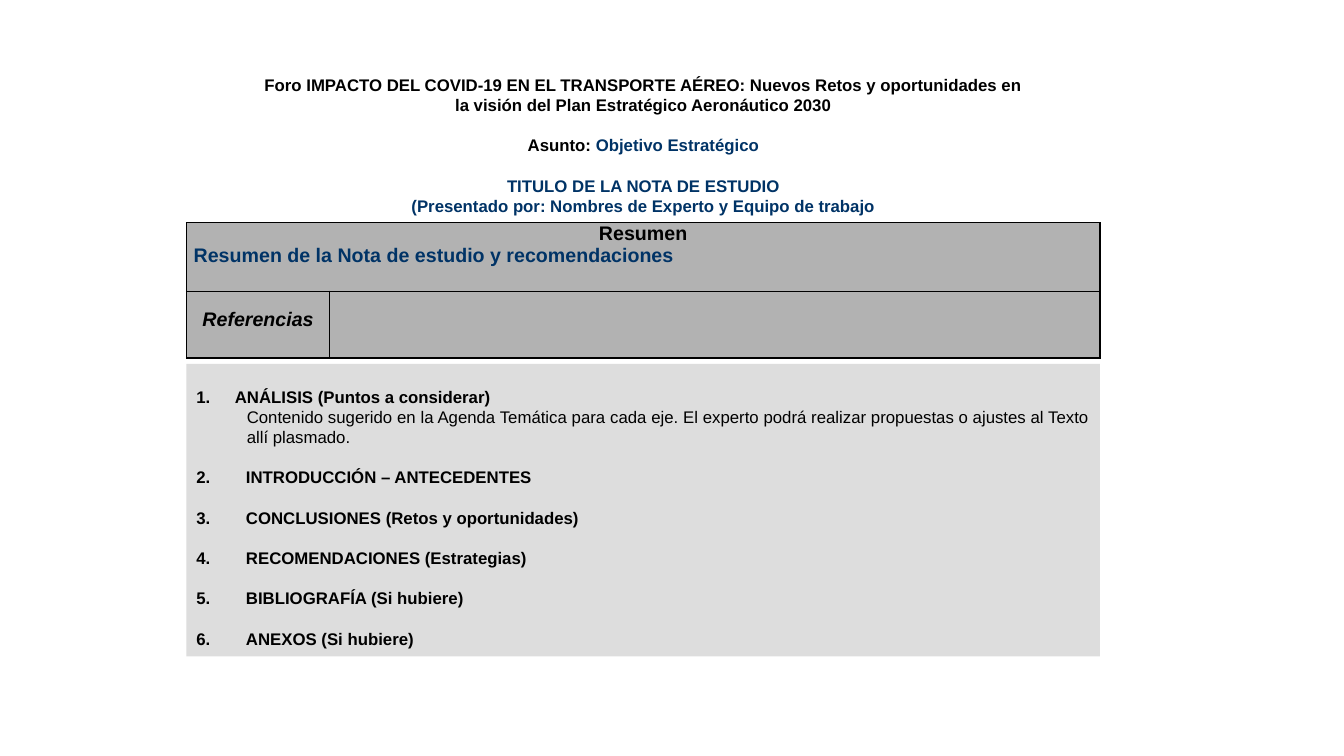
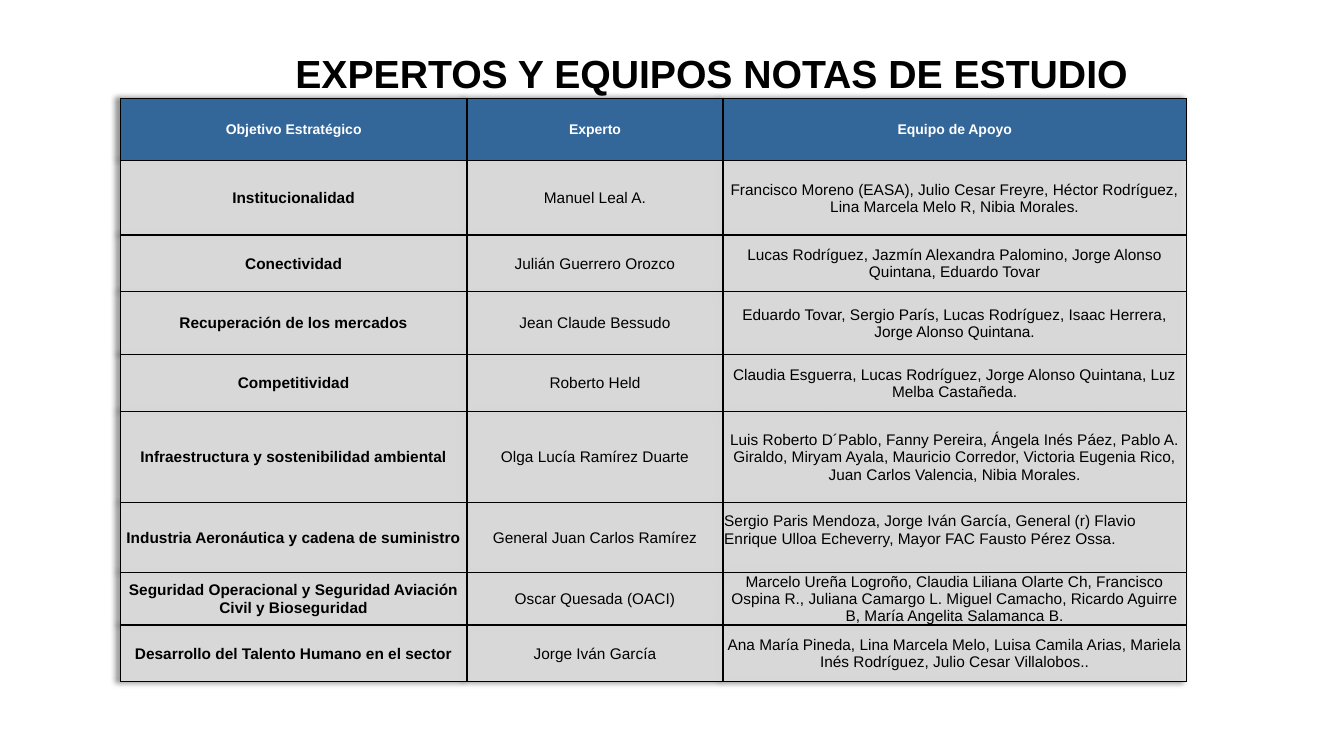
from lxml import etree
from pptx import Presentation
from pptx.dml.color import RGBColor
from pptx.enum.shapes import MSO_SHAPE
from pptx.enum.text import MSO_ANCHOR, MSO_AUTO_SIZE, PP_ALIGN
from pptx.oxml import parse_xml
from pptx.oxml.ns import nsdecls, qn
from pptx.util import Cm, Pt

BLACK, WHITE, NAVY, BLUE = "000000", "FFFFFF", "003366", "336699"
SUMMARY_GRAY, LIGHT_GRAY = "B2B2B2", "DDDDDD"
LINE_GAP = Pt(14.4)
TITLE_ONLY = 5
color = RGBColor.from_string


def write(paragraph, text, size, hue=BLACK, align=PP_ALIGN.CENTER, bold=True, italic=False):
    """Add a run in the deck's typeface and align its paragraph."""
    paragraph.alignment = align
    run = paragraph.add_run()
    run.text = text
    style = {"name": "Arial", "size": Pt(size), "bold": bold, "italic": italic}
    for attribute, value in style.items():
        setattr(run.font, attribute, value)
    run.font.color.rgb = color(hue)


def format_cell(cell, fill, margins):
    """Fill a cell, set its left, top, right and bottom margins, and border it."""
    cell.fill.solid()
    cell.fill.fore_color.rgb = color(fill)
    for side, margin in zip(("left", "top", "right", "bottom"), margins):
        setattr(cell, f"margin_{side}", Cm(margin))
    properties = cell._tc.get_or_add_tcPr()
    for index, edge in enumerate(("lnL", "lnR", "lnT", "lnB")):
        properties.insert(index, parse_xml(
            f'<a:{edge} {nsdecls("a")} w="12700"><a:solidFill>'
            f'<a:srgbClr val="{BLACK}"/></a:solidFill></a:{edge}>'))


prs = Presentation()
prs.slide_width, prs.slide_height = Cm(33.87), Cm(19.05)

# Slide 1: study note template
note = prs.slides.add_slide(prs.slide_layouts[TITLE_ONLY])
heading = note.shapes.title
heading.left, heading.top, heading.width, heading.height = Cm(6.27), Cm(1.75), Cm(19.89), Cm(3.84)
heading_text = heading.text_frame
heading_text.auto_size = MSO_AUTO_SIZE.NONE
heading_text.vertical_anchor = MSO_ANCHOR.TOP
heading_lines = [
    ([("Foro IMPACTO DEL COVID-19 EN EL TRANSPORTE AÉREO: Nuevos Retos y oportunidades en "
       "la visión del Plan Estratégico Aeronáutico 2030", BLACK)], 0),
    ([("Asunto: ", BLACK), ("Objetivo Estratégico", NAVY)], LINE_GAP),
    ([("TITULO DE LA NOTA DE ESTUDIO", NAVY)], LINE_GAP),
    ([("(Presentado por: Nombres de Experto y Equipo de trabajo", NAVY)], 0),
]
for index, (pieces, gap) in enumerate(heading_lines):
    line = heading_text.add_paragraph() if index else heading_text.paragraphs[0]
    line.space_before = gap
    for text, hue in pieces:
        write(line, text, 12, hue)

summary = note.shapes.add_table(2, 2, Cm(4.7), Cm(5.61), Cm(23.02), Cm(3.41)).table
summary.first_row = summary.horz_banding = False
for column, width in zip(summary.columns, (3.61, 19.41)):
    column.width = Cm(width)
for row, height in zip(summary.rows, (1.73, 1.68)):
    row.height = Cm(height)
for cell in summary.iter_cells():
    format_cell(cell, SUMMARY_GRAY, (0.18, 0, 0.18, 0))
summary.cell(0, 0).merge(summary.cell(0, 1))
abstract = summary.cell(0, 0).text_frame
write(abstract.paragraphs[0], "Resumen", 14)
write(abstract.add_paragraph(), "Resumen de la Nota de estudio y recomendaciones", 14, NAVY,
      PP_ALIGN.JUSTIFY)
references = summary.cell(1, 0)
references.margin_top = Cm(0.44)
write(references.text_frame.paragraphs[0], "Referencias", 14, italic=True)

outline = note.shapes.add_shape(MSO_SHAPE.RECTANGLE, Cm(4.7), Cm(9.17), Cm(23.02), Cm(7.37))
outline.shadow.inherit = False
outline.fill.solid()
outline.fill.fore_color.rgb = color(LIGHT_GRAY)
outline.line.fill.background()
outline_text = outline.text_frame
outline_text.word_wrap = True
outline_text.vertical_anchor = MSO_ANCHOR.TOP
outline_text.margin_top = Cm(0.57)
sections = [
    ("ANÁLISIS (Puntos a considerar)",
     "Contenido sugerido en la Agenda Temática para cada eje. El experto podrá realizar "
     "propuestas o ajustes al Texto allí plasmado."),
    ("INTRODUCCIÓN – ANTECEDENTES", ""),
    ("CONCLUSIONES (Retos y oportunidades)", ""),
    ("RECOMENDACIONES (Estrategias)", ""),
    ("BIBLIOGRAFÍA (Si hubiere)", ""),
    ("ANEXOS (Si hubiere)", ""),
]
for number, (section, detail) in enumerate(sections, 1):
    first = number == 1
    item = outline_text.paragraphs[0] if first else outline_text.add_paragraph()
    indent = Cm(0.97 if first else 1.25)
    properties = item._p.get_or_add_pPr()
    properties.set("marL", str(indent))
    properties.set("indent", str(-indent))
    etree.SubElement(properties, qn("a:buFont"), typeface="+mj-lt")
    etree.SubElement(properties, qn("a:buAutoNum"), type="arabicPeriod", startAt=str(number))
    item.space_before = 0 if first else LINE_GAP
    write(item, section, 12, align=PP_ALIGN.JUSTIFY)
    if detail:
        body = outline_text.add_paragraph()
        body._p.get_or_add_pPr().set("marL", str(Cm(1.27)))
        write(body, detail, 12, align=PP_ALIGN.JUSTIFY, bold=False)

# Slide 2: experts and their teams
teams = prs.slides.add_slide(prs.slide_layouts[TITLE_ONLY])
title = teams.shapes.title
title.left, title.top, title.width, title.height = Cm(7.19), Cm(1.32), Cm(22.12), Cm(1.17)
title.text_frame.auto_size = MSO_AUTO_SIZE.NONE
title.text_frame.vertical_anchor = MSO_ANCHOR.MIDDLE
title_line = title.text_frame.paragraphs[0]
title_line.line_spacing = 0.9
write(title_line, "EXPERTOS Y EQUIPOS NOTAS DE ESTUDIO", 28, align=PP_ALIGN.LEFT)

roster = [
    ("Objetivo Estratégico", "Experto", "Equipo de Apoyo"),
    ("Institucionalidad", "Manuel Leal A.",
     "Francisco Moreno (EASA), Julio Cesar Freyre, Héctor Rodríguez, Lina Marcela Melo R, "
     "Nibia Morales."),
    ("Conectividad", "Julián Guerrero Orozco",
     "Lucas Rodríguez, Jazmín Alexandra Palomino, Jorge Alonso Quintana, Eduardo Tovar"),
    ("Recuperación de los mercados", "Jean Claude Bessudo",
     "Eduardo Tovar, Sergio París, Lucas Rodríguez, Isaac Herrera, Jorge Alonso Quintana."),
    ("Competitividad", "Roberto Held",
     "Claudia Esguerra, Lucas Rodríguez, Jorge Alonso Quintana, Luz Melba Castañeda."),
    ("Infraestructura y sostenibilidad ambiental", "Olga Lucía Ramírez Duarte",
     "Luis Roberto D´Pablo, Fanny Pereira, Ángela Inés Páez, Pablo A. Giraldo, Miryam Ayala, "
     "Mauricio Corredor, Victoria Eugenia Rico, Juan Carlos Valencia, Nibia Morales."),
    ("Industria Aeronáutica y cadena de suministro", "General Juan Carlos Ramírez",
     "Sergio Paris Mendoza, Jorge Iván García, General (r) Flavio Enrique Ulloa Echeverry, "
     "Mayor FAC Fausto Pérez Ossa."),
    ("Seguridad Operacional y Seguridad Aviación Civil y Bioseguridad", "Oscar Quesada (OACI)",
     "Marcelo Ureña Logroño, Claudia Liliana Olarte Ch, Francisco Ospina R., Juliana Camargo L. "
     "Miguel Camacho, Ricardo Aguirre B, María Angelita Salamanca B."),
    ("Desarrollo del Talento Humano en el sector", "Jorge Iván García",
     "Ana María Pineda, Lina Marcela Melo, Luisa Camila Arias, Mariela Inés Rodríguez, "
     "Julio Cesar Villalobos.."),
]
row_heights = (1.56, 1.88, 1.43, 1.58, 1.43, 2.31, 1.75, 1.32, 1.43)
experts = teams.shapes.add_table(len(roster), 3, Cm(3.03), Cm(2.48), Cm(26.87),
                                 Cm(sum(row_heights))).table
experts.first_row = experts.horz_banding = False
experts._tbl.tblPr.insert(0, parse_xml(
    f'<a:effectLst {nsdecls("a")}><a:outerShdw blurRad="50800" dist="38100" dir="10800000">'
    f'<a:srgbClr val="{BLACK}"><a:alpha val="40000"/></a:srgbClr></a:outerShdw></a:effectLst>'))
for column, width in zip(experts.columns, (8.74, 6.45, 11.68)):
    column.width = Cm(width)
for row_index, (row, height, texts) in enumerate(zip(experts.rows, row_heights, roster)):
    row.height = Cm(height)
    header = row_index == 0
    for column_index, (cell, text) in enumerate(zip(row.cells, texts)):
        format_cell(cell, BLUE if header else LIGHT_GRAY, (0.03, 0.03, 0.03, 0))
        cell.vertical_anchor = MSO_ANCHOR.MIDDLE
        write(cell.text_frame.paragraphs[0], text, 10 if header else 11,
              WHITE if header else BLACK, bold=header or column_index == 0)
        if not header:
            fill_color = cell._tc.tcPr.find(qn("a:solidFill"))[0]
            etree.SubElement(fill_color, qn("a:alpha"), val="92000")
industry_team = experts.cell(6, 2)
industry_team.margin_bottom = Cm(0.4)
industry_team.text_frame.paragraphs[0].alignment = PP_ALIGN.LEFT

prs.save("out.pptx")
